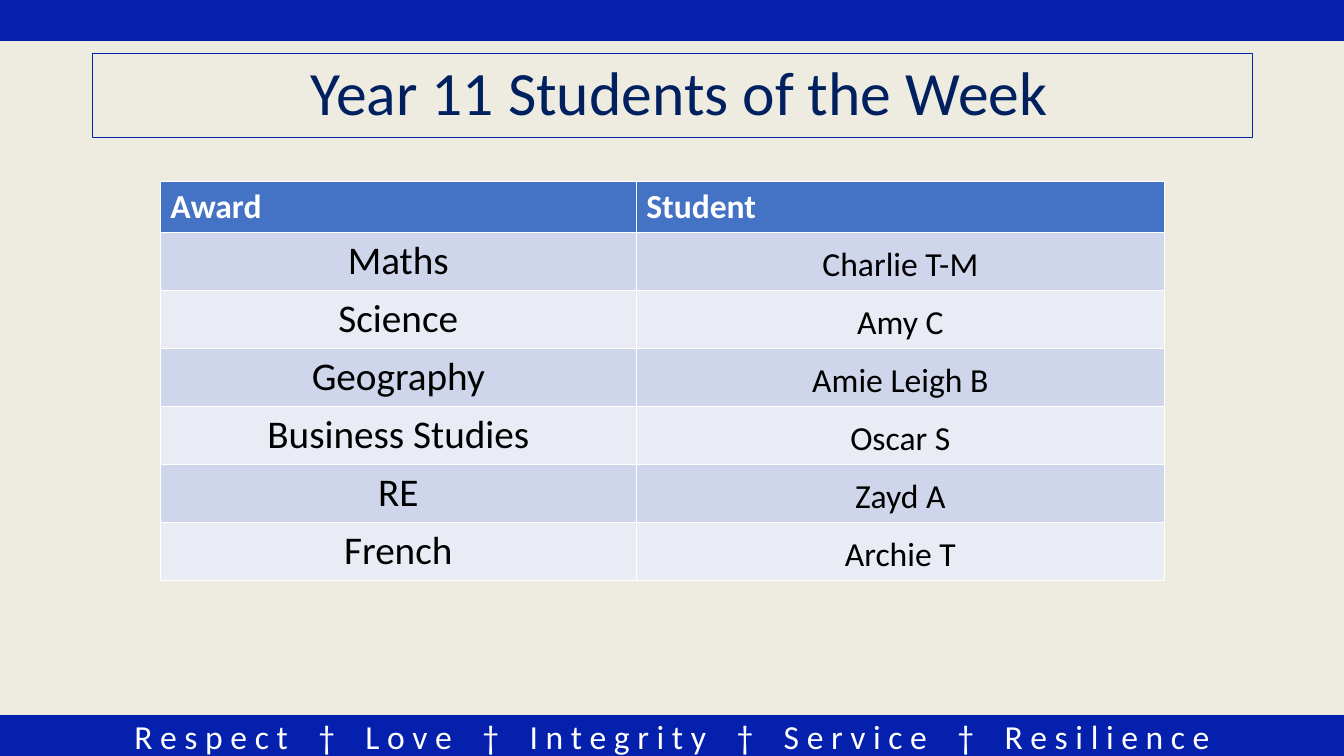
"""Build the weekly awards slide with its title, table and value banner."""
from pptx import Presentation
from pptx import util as u
from pptx.dml.color import RGBColor
from pptx.enum import shapes, text

COLOURS = {
    "background": "EEECE1", "bar": "0420AC", "title": "002060",
    "white": "FFFFFF", "black": "000000", "header": "4472C4",
    "odd": "CFD5EA", "even": "E9EBF5",
}
VALUES = ["Respect", "Love", "Integrity", "Service", "Resilience"]
AWARDS = [
    ("Maths", "Charlie T-M"), ("Science", "Amy C"),
    ("Geography", "Amie Leigh B"), ("Business Studies", "Oscar S"),
    ("RE", "Zayd A"), ("French", "Archie T"),
]


def colour(name):
    return RGBColor.from_string(COLOURS[name])


class AwardSlide:
    def __init__(self, deck):
        self.font = "Calibri"
        self.page = deck.slides.add_slide(deck.slide_layouts[5])
        fill = self.page.background.fill
        fill.solid()
        fill.fore_color.rgb = colour("background")

    def format_span(self, span, size, tint, bold=False):
        span.font.name = self.font
        span.font.size = u.Pt(size)
        span.font.bold = bold
        span.font.color.rgb = colour(tint)

    def title(self, words, left, top, width, height):
        box = self.page.shapes.title
        box.left, box.top = u.Inches(left), u.Inches(top)
        box.width, box.height = u.Inches(width), u.Inches(height)
        box.line.color.rgb = colour("bar")
        box.line.width = u.Pt(0.75)
        frame = box.text_frame
        frame.text = words
        frame.vertical_anchor = text.MSO_ANCHOR.MIDDLE
        para = frame.paragraphs[0]
        para.alignment = text.PP_ALIGN.CENTER
        para.line_spacing = 0.9
        self.format_span(para.runs[0], 44, "title")

    def bar(self, top):
        box = self.page.shapes.add_shape(
            shapes.MSO_SHAPE.RECTANGLE, 0, u.Inches(top), u.Inches(13.33), u.Inches(0.4))
        box.shadow.inherit = False
        box.fill.solid()
        box.fill.fore_color.rgb = colour("bar")
        box.line.color.rgb = colour("bar")
        box.line.width = u.Pt(1)
        return box

    def banner(self, top, words):
        frame = self.bar(top).text_frame
        frame.vertical_anchor = text.MSO_ANCHOR.MIDDLE
        para = frame.paragraphs[0]
        para.alignment = text.PP_ALIGN.CENTER
        for index, word in enumerate(words):
            pieces = [" ", "†", " "] if index else []
            for piece in pieces + [" ".join(word)]:
                span = para.add_run()
                span.text = piece
                self.format_span(span, 24, "white")
                if piece == " ":
                    span.font._element.set("spc", "1630")

    def cell(self, cell, words, size, tint, fill, bold=False):
        cell.fill.solid()
        cell.fill.fore_color.rgb = colour(fill)
        cell.text_frame.text = words
        para = cell.text_frame.paragraphs[0]
        self.format_span(para.runs[0], size, tint, bold)
        return para

    def table(self, left, top, widths, headings, rows):
        header_height, row_height = 0.5, 0.575
        height = header_height + row_height * len(rows)
        table = self.page.shapes.add_table(
            len(rows) + 1, len(widths), u.Inches(left), u.Inches(top),
            u.Inches(sum(widths)), u.Inches(height)).table
        for column, width in zip(table.columns, widths):
            column.width = u.Inches(width)
        for index, row in enumerate(table.rows):
            row.height = u.Inches(row_height if index else header_height)
        for column, heading in enumerate(headings):
            self.cell(table.cell(0, column), heading, 24, "white", "header", True)
        for index, (award, student) in enumerate(rows, 1):
            fill = "odd" if index % 2 else "even"
            name = table.cell(index, 1)
            for para in (self.cell(table.cell(index, 0), award, 28, "black", fill),
                         self.cell(name, student, 24, "black", fill)):
                para.alignment = text.PP_ALIGN.CENTER
            name.vertical_anchor = text.MSO_ANCHOR.BOTTOM
            name.margin_left = name.margin_top = name.margin_right = u.Inches(0.01)
            name.margin_bottom = u.Inches(0.05)


def main():
    deck = Presentation()
    deck.slide_width, deck.slide_height = u.Inches(13.33), u.Inches(7.5)
    slide = AwardSlide(deck)
    slide.banner(7.1, VALUES)
    slide.bar(0)
    slide.title(" Year 11 Students of the Week", 0.92, 0.53, 11.5, 0.83)
    slide.table(1.59, 1.8, [4.72, 5.24], ["Award", "Student"], AWARDS)
    deck.save("out.pptx")


if __name__ == "__main__":
    main()
